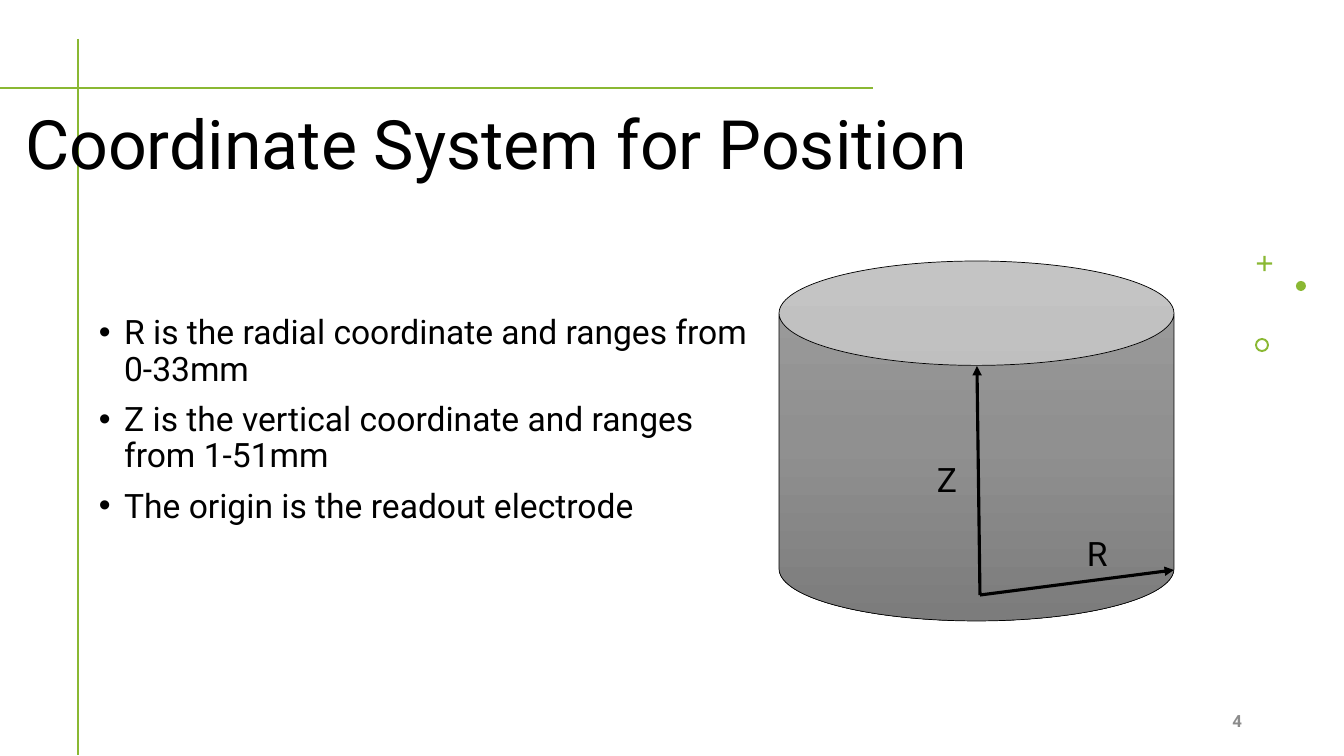
from copy import deepcopy
from dataclasses import dataclass

from lxml.etree import SubElement
from pptx import Presentation
from pptx.dml.color import RGBColor
from pptx.enum.shapes import MSO_CONNECTOR, MSO_SHAPE
from pptx.enum.text import MSO_ANCHOR, MSO_AUTO_SIZE, PP_ALIGN
from pptx.oxml.ns import qn
from pptx.util import Emu, Pt

TITLE = ("Coordinate System for Position", (15, 59, 1055, 130))
BULLETS = [
    "R is the radial coordinate and ranges from 0-33mm",
    "Z is the vertical coordinate and ranges from 1-51mm",
    "The origin is the readout electrode",
]
BULLETS_BOX = (89, 311, 682, 369)
AXIS_LABELS = [("R", (1077, 533, 47, 53)), ("Z", (927, 459, 47, 53))]
PAGE_NUMBER = ("4", (950, 701, 302, 40))

GUIDE_LINES = [((78, 39), (78, 755)), ((0, 88), (873, 88))]
ORNAMENTS = [  # preset, box, adjustment
    (MSO_SHAPE.MATH_PLUS, (1254, 253, 21, 21), 0.1),
    (MSO_SHAPE.OVAL, (1296, 281, 10, 10), None),
    (MSO_SHAPE.DONUT, (1255, 338, 14, 14), 0.14),
]
CYLINDER_BOX = (779, 261, 395, 360)
CYLINDER_RIM = 0.29
ORIGIN = (980, 595)
AXIS_TIPS = {"Z": (977, 366), "R": (1174, 570)}


@dataclass(frozen=True)
class Theme:
    font: str = "Roboto"
    ink: str = "000000"
    accent: str = "8AB833"
    muted: str = "8C8C8C"
    cylinder: tuple = ("9D9D9D", "909090", "7C7C7C")
    title_size: float = 48.6
    body_size: int = 24
    page_size: int = 12
    guide_width: float = 2
    axis_width: float = 2.25
    outline_width: float = 0.5


THEME = Theme()
EMU_PER_PX = 914400 / 100.8


def px(*lengths):
    return [Emu(round(length * EMU_PER_PX)) for length in lengths]


def rgb(code):
    return RGBColor.from_string(code)


def write(shape, box, lines, size, color=THEME.ink, bold=False,
          anchor=MSO_ANCHOR.TOP, bulleted=False, **paragraph_format):
    shape.left, shape.top, shape.width, shape.height = px(*box)
    frame = shape.text_frame
    frame.text = "\n".join(lines)
    frame_format = {"word_wrap": True, "auto_size": MSO_AUTO_SIZE.NONE,
                    "vertical_anchor": anchor}
    for name, value in frame_format.items():
        setattr(frame, name, value)
    for paragraph in frame.paragraphs:
        for name, value in paragraph_format.items():
            setattr(paragraph, name, value)
        font = paragraph.runs[0].font
        for name, value in {"name": THEME.font, "size": Pt(size), "bold": bold}.items():
            setattr(font, name, value)
        font.color.rgb = rgb(color)
        if bulleted:
            add_bullet(paragraph)


def add_bullet(paragraph, indent=228600):
    properties = paragraph._p.get_or_add_pPr()
    properties.set("marL", str(indent))
    properties.set("indent", str(-indent))
    SubElement(properties, qn("a:buFont"), typeface="Arial")
    SubElement(properties, qn("a:buChar"), char="•")


def add_line(shapes, start, end, color, width, arrow=False):
    line = shapes.add_connector(MSO_CONNECTOR.STRAIGHT, *px(*start, *end))
    line.line.color.rgb = rgb(color)
    line.line.width = Pt(width)
    if arrow:
        SubElement(line.line._get_or_add_ln(), qn("a:tailEnd"), type="triangle")
    SubElement(line._element.spPr, qn("a:effectLst"))


def add_preset(shapes, preset, box, adjustment):
    shape = shapes.add_shape(preset, *px(*box))
    shape.shadow.inherit = False
    if adjustment is not None:
        shape.adjustments[0] = adjustment
    return shape


def fill_cylinder(fill):
    """Shade from top to bottom, with a middle stop between the two ends."""
    fill.gradient()
    fill.gradient_angle = 270
    stops = fill.gradient_stops
    first_stop = stops[0]._gs
    first_stop.addnext(deepcopy(first_stop))
    for index, (stop, color) in enumerate(zip(fill.gradient_stops, THEME.cylinder)):
        stop.position = index / 2
        stop.color.rgb = rgb(color)


def main():
    deck = Presentation()
    deck.slide_width, deck.slide_height = px(1344, 756)
    slide = deck.slides.add_slide(deck.slide_layouts[5])
    shapes = slide.shapes

    for start, end in GUIDE_LINES:
        add_line(shapes, start, end, THEME.accent, THEME.guide_width)
    for ornament in ORNAMENTS:
        shape = add_preset(shapes, *ornament)
        shape.fill.solid()
        shape.fill.fore_color.rgb = rgb(THEME.accent)
        shape.line.fill.background()

    heading, heading_box = TITLE
    title = shapes.title
    write(title, heading_box, [heading], THEME.title_size, anchor=MSO_ANCHOR.BOTTOM,
          line_spacing=0.9, alignment=PP_ALIGN.LEFT)
    shapes._spTree.append(title._element)  # in front of the guide lines

    cylinder = add_preset(shapes, MSO_SHAPE.CAN, CYLINDER_BOX, CYLINDER_RIM)
    fill_cylinder(cylinder.fill)
    cylinder.line.color.rgb = rgb(THEME.ink)
    cylinder.line.width = Pt(THEME.outline_width)
    for tip in AXIS_TIPS.values():
        add_line(shapes, ORIGIN, tip, THEME.ink, THEME.axis_width, arrow=True)

    body_format = {"line_spacing": 0.9, "space_before": Pt(10)}
    for label, box in AXIS_LABELS:
        write(shapes.add_textbox(*px(*box)), box, [label], THEME.body_size, **body_format)
    write(shapes.add_textbox(*px(*BULLETS_BOX)), BULLETS_BOX, BULLETS,
          THEME.body_size, bulleted=True, **body_format)

    number, number_box = PAGE_NUMBER
    write(shapes.add_textbox(*px(*number_box)), number_box, [number], THEME.page_size,
          color=THEME.muted, bold=True, anchor=MSO_ANCHOR.MIDDLE,
          alignment=PP_ALIGN.RIGHT)

    deck.save("out.pptx")


if __name__ == "__main__":
    main()
